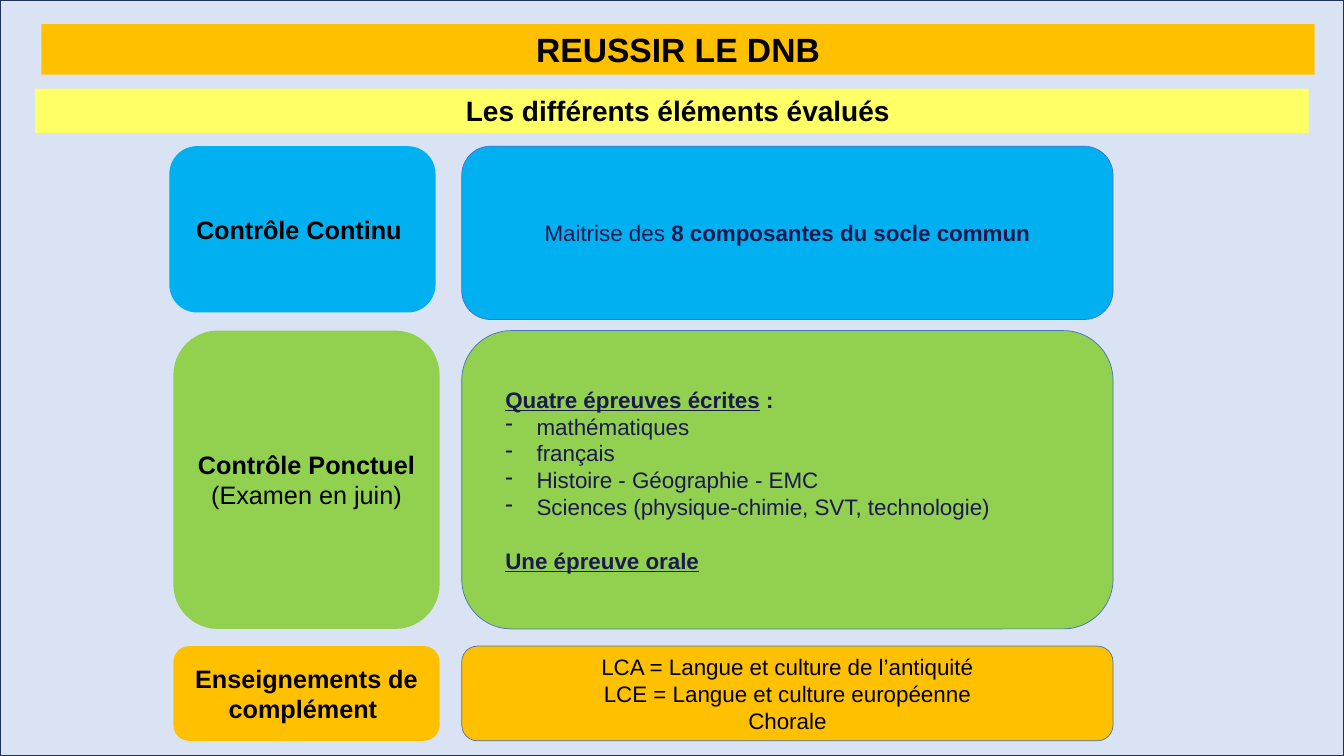
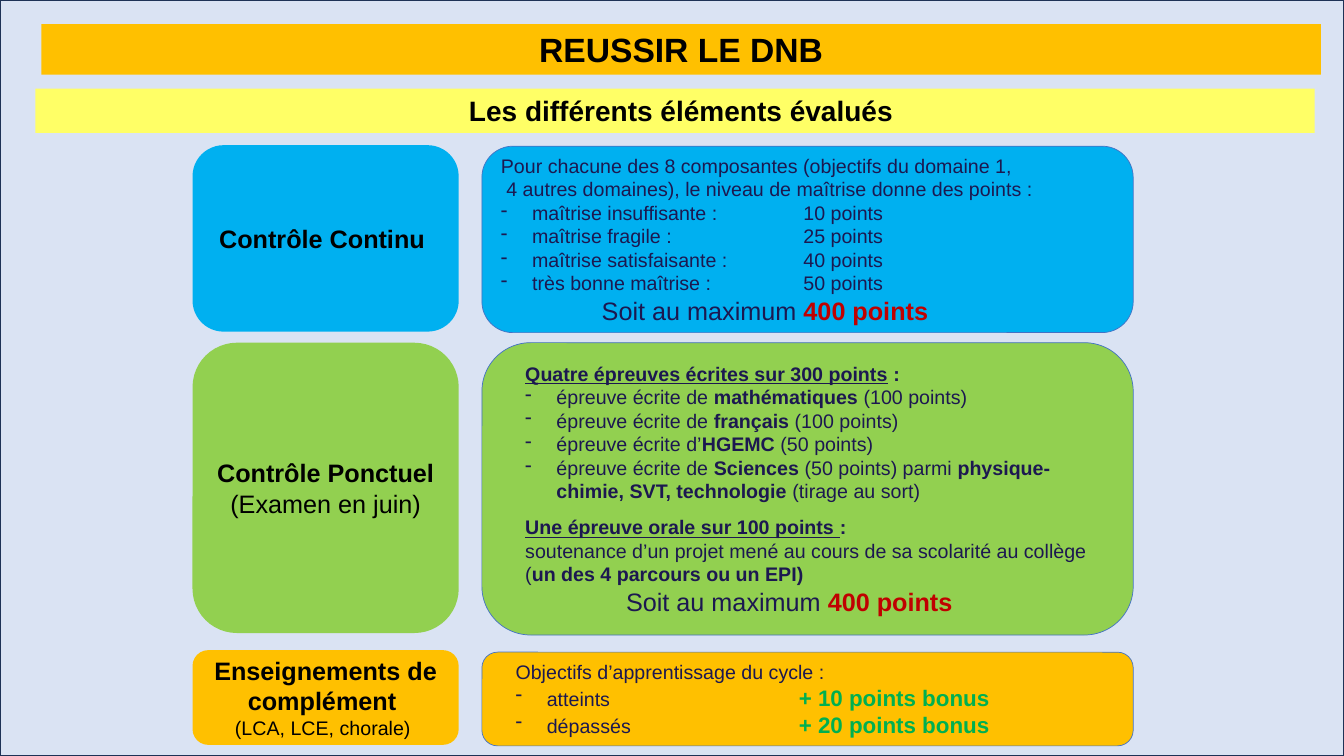
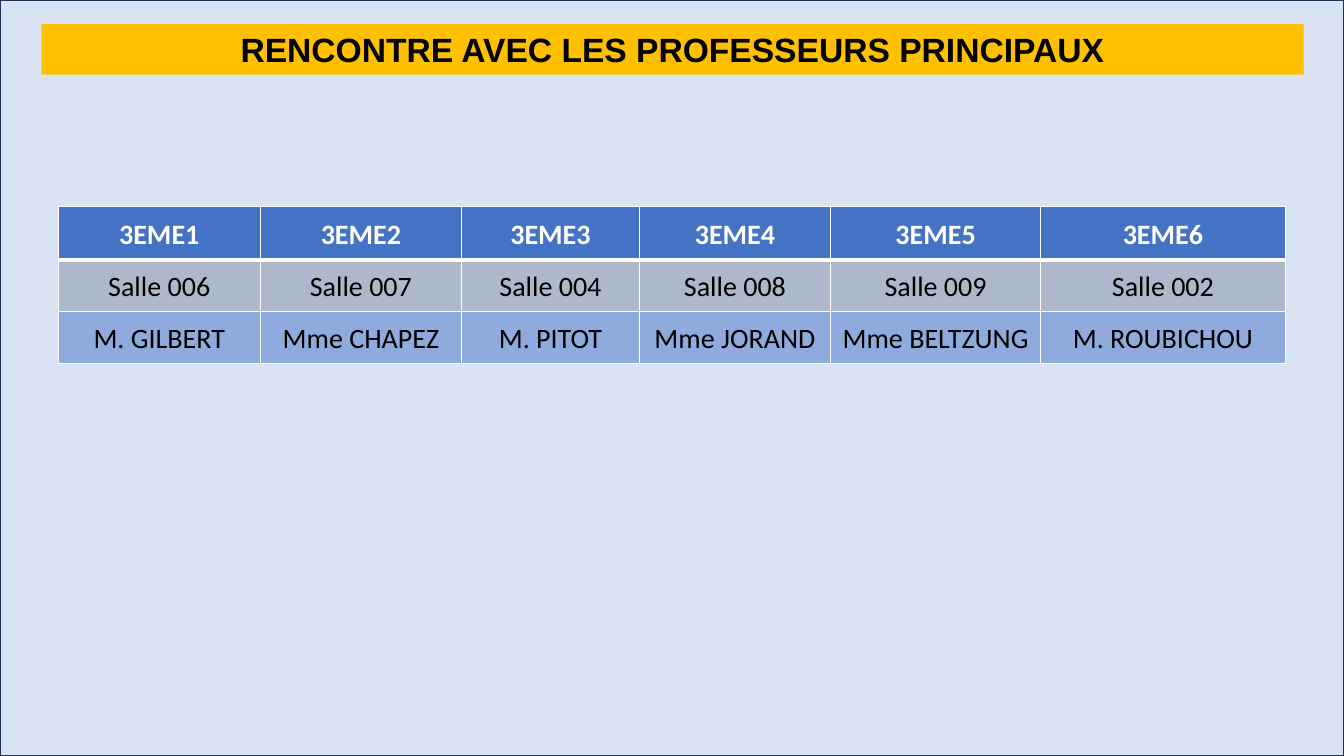
from dataclasses import dataclass

from lxml import etree
from pptx import Presentation
from pptx.dml.color import RGBColor as RGB
from pptx.enum.shapes import MSO_SHAPE as Form
from pptx.enum.text import MSO_ANCHOR as Anchor, MSO_AUTO_SIZE as Fit, PP_ALIGN as Align
from pptx.oxml.ns import qn
from pptx.util import Inches, Pt


@dataclass(frozen=True)
class Theme:
    font: str = "Arial"
    grid: str = "Calibri"
    page: str = "DAE3F3"
    frame: str = "1E3256"
    gold: str = "FFC000"
    lemon: str = "FFFF66"
    sky: str = "00B0F0"
    lime: str = "92D050"
    edge: str = "4472C4"
    grey: str = "ADB9CA"
    pale: str = "8FAADC"
    ink: str = "1C1850"
    black: str = "000000"
    white: str = "FFFFFF"
    red: str = "C00000"
    green: str = "00B050"
    title: int = 24
    head: int = 20
    label: int = 18
    text: int = 16
    small: int = 14


T = Theme()
WIDE, HIGH = 13.33, 7.5
TAG_W, BODY_W = 2.64, 6.46

# Run styles: each changes the base font of its box
RUNS = {
    "": {},
    "b": {"bold": True},
    "u": {"bold": True, "underline": True},
    "note": {"size": T.small},
    "max": {"size": T.label},
    "red": {"size": T.label, "bold": True, "color": T.red},
    "plus": {"size": T.text, "bold": True, "color": T.green},
}
# Paragraph styles: left margin, first line indent, other formats
PARAS = {
    "mid": (0, 0, {"alignment": Align.CENTER}),
    "head": (0.12, 0, {"alignment": Align.CENTER}),
    "cell": (0, 0, {"alignment": Align.CENTER, "line_spacing": 1.07}),
    "left": (0, 0, {}),
    "in": (0.19, 0, {}),
    "gap": (0.19, 0, {"space_before": Pt(19)}),
    "near": (0.19, 0, {"space_before": Pt(9)}),
    "dash": (0.31, -0.31, {}),
    "list": (0.5, -0.31, {}),
}


class Deck:
    def __init__(self):
        self.file = Presentation()
        self.file.slide_width, self.file.slide_height = Inches(WIDE), Inches(HIGH)
        self.slide = None

    def page(self):
        self.slide = self.file.slides.add_slide(self.file.slide_layouts[6])
        self.shape(Form.RECTANGLE, (0, 0, WIDE, HIGH), T.page, (T.frame, 1))

    def shape(self, form, box, fill, line=None):
        item = self.slide.shapes.add_shape(form, *map(Inches, box))
        item.shadow.inherit = False
        item.fill.solid()
        item.fill.fore_color.rgb = RGB.from_string(fill)
        if line:
            item.line.color.rgb = RGB.from_string(line[0])
            item.line.width = Pt(line[1])
        else:
            item.line.fill.background()
        return item

    def put(self, frame, paras, **base):
        """Each paragraph is (style, run, ...); a run is a text or (text, style)."""
        frame.word_wrap = True
        for i, (kind, *runs) in enumerate(paras):
            para = frame.paragraphs[0] if i == 0 else frame.add_paragraph()
            left, first, looks = PARAS[kind]
            for key, value in {"alignment": Align.LEFT, **looks}.items():
                setattr(para, key, value)
            props = para._p.get_or_add_pPr()
            for key, value in {"marL": left, "indent": first, "defTabSz": 1}.items():
                props.set(key, str(Inches(value)))
            if first:
                etree.SubElement(props, qn("a:buChar")).set("char", "-")
            for part in runs:
                text, style = (part, "") if isinstance(part, str) else part
                run = para.add_run()
                run.text = text
                look = {"name": T.font, "bold": False, **base, **RUNS[style]}
                run.font.color.rgb = RGB.from_string(look.pop("color"))
                look["size"] = Pt(look["size"])
                for key, value in look.items():
                    setattr(run.font, key, value)

    def band(self, box, fill, text, size, kind="mid"):
        frame = self.shape(Form.RECTANGLE, box, fill).text_frame
        frame.vertical_anchor = Anchor.TOP
        self.put(frame, [(kind, (text, "b"))], size=size, color=T.black)
        frame.auto_size = Fit.SHAPE_TO_FIT_TEXT

    def title(self, text, width):
        self.band((0.41, 0.24, width, 0.5), T.gold, text, T.title)

    def heads(self, width):
        self.title("REUSSIR LE DNB", width)
        self.band((0.35, 0.88, width, 0.44), T.lemon,
                  "Les différents éléments évalués", T.head, "head")

    def card(self, box, fill, paras, size, color, line=None):
        frame = self.shape(Form.ROUNDED_RECTANGLE, box, fill, line).text_frame
        frame.vertical_anchor = Anchor.MIDDLE
        self.put(frame, paras, size=size, color=color)

    def tag(self, x, y, h, fill, paras):
        self.card((x, y, TAG_W, h), fill, paras, T.label, T.black)

    def body(self, x, y, h, fill, paras, size, color=T.ink):
        self.card((x, y, BODY_W, h), fill, paras, size, color, (T.edge, 0.5))

    def border(self, cell, **sizes):
        props = cell._tc.get_or_add_tcPr()
        for i, side in enumerate("LRTB"):
            line = etree.Element(qn("a:ln" + side), w=str(Pt(sizes.get(side, 1))))
            fill = etree.SubElement(line, qn("a:solidFill"))
            etree.SubElement(fill, qn("a:srgbClr")).set("val", T.white)
            props.insert(i, line)

    def table(self, x, y, cols, highs, fills, rows):
        grid = self.slide.shapes.add_table(
            len(rows), len(cols), *map(Inches, (x, y, sum(cols), sum(highs)))).table
        grid.horz_banding = False
        for col, width in zip(grid.columns, cols):
            col.width = Inches(width)
        for r, (row, high, fill) in enumerate(zip(rows, highs, fills)):
            grid.rows[r].height = Inches(high)
            for c, text in enumerate(row):
                cell = grid.cell(r, c)
                cell.fill.solid()
                cell.fill.fore_color.rgb = RGB.from_string(fill)
                looks = {"margin_left": Inches(0.06), "margin_right": Inches(0.06),
                         "margin_top": 0, "margin_bottom": 0,
                         "vertical_anchor": Anchor.MIDDLE}
                for key, value in looks.items():
                    setattr(cell, key, value)
                self.border(cell, **({"B": 3}, {"T": 3}, {})[r])
                self.put(cell.text_frame, [("cell", text)], name=T.grid, size=T.head,
                         bold=r == 0, color=T.black if r else T.white)


STEADY = [("mid", ("Contrôle Continu ", "b"))]
EXAM = [("mid", ("Contrôle Ponctuel ", "b")), ("mid", "(Examen en juin)")]
EXTRA = ("mid", ("Enseignements de complément ", "b"))
TOTAL = ["\t", ("Soit au maximum ", "max"), ("400 points", "red")]


def parts(deck):
    deck.page()
    tag, body = 1.72, 4.58
    deck.tag(tag, 3.28, 2.96, T.lime, EXAM)
    topics = ["mathématiques", "français", "Histoire - Géographie - EMC",
              "Sciences (physique-chimie, SVT, technologie)"]
    deck.body(body, 3.28, 2.96, T.lime, [
        ("in", ("Quatre épreuves écrites", "u"), (" :", "b")),
        *[("list", topic) for topic in topics],
        ("gap", ("Une épreuve orale", "u")),
    ], T.text)
    deck.tag(tag, 6.41, 0.94, T.gold, [EXTRA])
    deck.body(body, 6.41, 0.94, T.gold, [
        ("mid", "LCA = Langue et culture de l’antiquité"),
        ("mid", "LCE = Langue et culture européenne"),
        ("mid", "Chorale"),
    ], T.text, T.black)
    deck.tag(1.68, 1.45, 1.65, T.sky, STEADY)
    deck.body(body, 1.45, 1.72, T.sky, [
        ("mid", "Maitrise des ", ("8 composantes du socle commun", "b")),
    ], T.text)
    deck.heads(12.63)


def points(deck):
    deck.page()
    deck.heads(12.69)
    tag, body = 1.91, 4.78
    deck.body(body, 6.47, 0.93, T.gold, [
        ("in", "Objectifs d’apprentissage du cycle :"),
        *[("list", goal + "\t\t", (f"+ {n} points bonus", "plus"))
          for goal, n in (("atteints", 10), ("dépassés", 20))],
    ], T.small)
    deck.tag(tag, 6.45, 0.94, T.gold, [EXTRA, ("mid", ("(LCA, LCE, chorale) ", "note"))])
    tests = [("de ", "mathématiques ", 100), ("de ", "français ", 100), ("d’", "HGEMC ", 50)]
    deck.body(body, 3.4, 2.9, T.lime, [
        ("in", ("Quatre épreuves écrites sur 300 points", "u"), (" :", "b")),
        *[("list", "épreuve écrite " + link, (topic, "b"), f"({n} points)")
          for link, topic, n in tests],
        ("list", "épreuve écrite de", (" Sciences ", "b"), "(50 points) parmi",
         (" physique-chimie, SVT, technologie ", "b"), "(tirage au sort)"),
        ("near", ("Une épreuve orale sur 100 points ", "u"), (":", "b")),
        ("in", "soutenance d’un projet mené au cours de sa scolarité au collège (",
         ("un des 4 parcours ou un EPI)", "b")),
        ("in", *TOTAL),
    ], T.small)
    deck.tag(tag, 3.4, 2.88, T.lime, EXAM)
    levels = [("insuffisante : \t", 10), ("fragile : \t\t", 25), ("satisfaisante : \t", 40)]
    deck.body(body, 1.45, 1.85, T.sky, [
        ("left", "Pour chacune des 8 composantes (objectifs du domaine 1,"),
        ("left", " 4 autres domaines), le niveau de maîtrise donne des points :"),
        *[("dash", f"maîtrise {level}{n} points") for level, n in levels],
        ("dash", "très bonne maîtrise : \t50 points"),
        ("left", *TOTAL),
    ], T.small)
    deck.tag(tag, 1.44, 1.85, T.sky, STEADY)


def rooms(deck):
    deck.page()
    deck.table(0.58, 2.05, (2, 2, 1.76, 1.9, 2.08, 2.43), (0.53, 0.51, 0.52),
               (T.edge, T.grey, T.pale), [
        [f"3EME{n}" for n in range(1, 7)],
        [f"Salle {room}" for room in ("006", "007", "004", "008", "009", "002")],
        ["M. GILBERT", "Mme CHAPEZ", "M. PITOT",
         "Mme JORAND", "Mme BELTZUNG", "M. ROUBICHOU"],
    ])
    deck.title("RENCONTRE AVEC LES PROFESSEURS PRINCIPAUX", 12.52)


def main():
    deck = Deck()
    for build in (parts, points, rooms):
        build(deck)
    deck.file.save("out.pptx")


if __name__ == "__main__":
    main()
